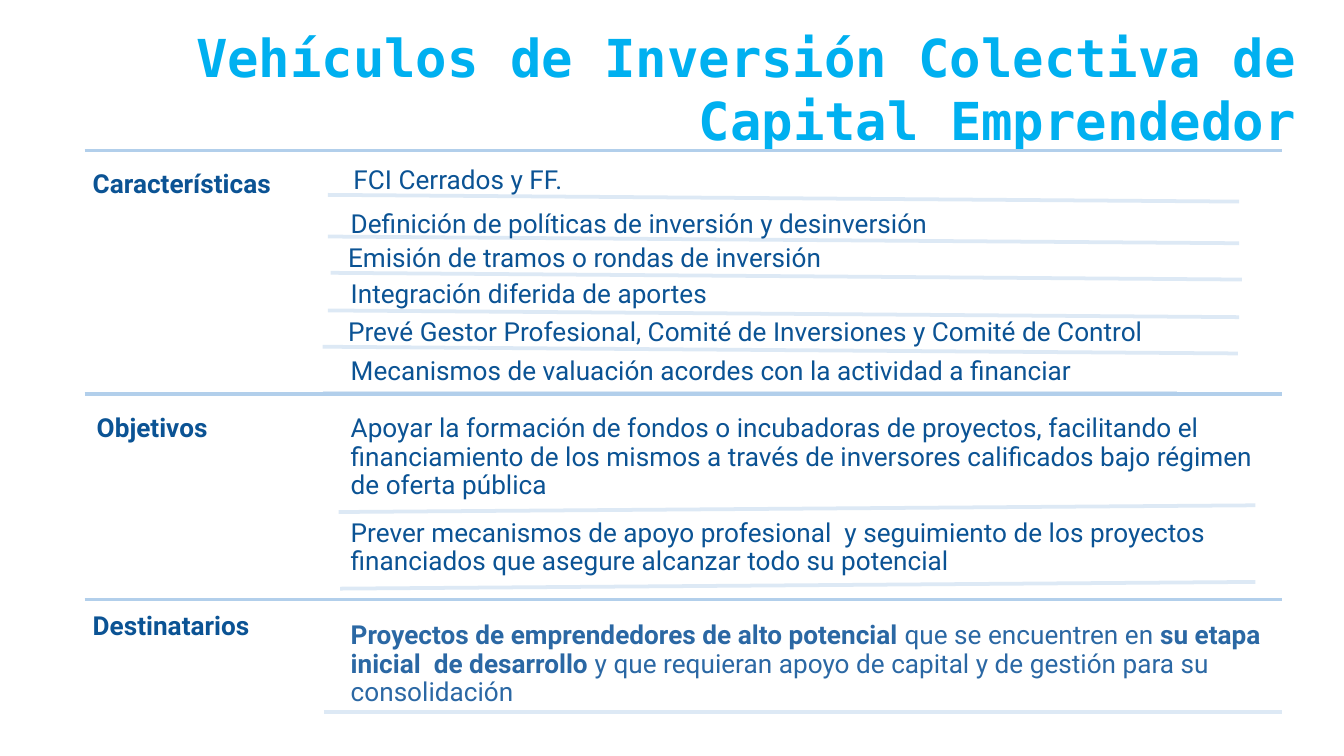
from lxml import etree
from pptx import Presentation
from pptx.dml.color import RGBColor
from pptx.enum.shapes import MSO_CONNECTOR
from pptx.enum.text import PP_ALIGN
from pptx.oxml.ns import qn
from pptx.util import Inches, Pt

STRAIGHT = MSO_CONNECTOR.STRAIGHT
LEFT, RIGHT, JUSTIFY = PP_ALIGN.LEFT, PP_ALIGN.RIGHT, PP_ALIGN.JUSTIFY
SKY = RGBColor(0x00, 0xB0, 0xF0)
NAVY = RGBColor(0x0B, 0x53, 0x94)
STEEL = RGBColor(0x2B, 0x68, 0xA4)
SECTION_LINE = RGBColor(0xB2, 0xCF, 0xEB)
ITEM_LINE = RGBColor(0xDD, 0xE9, 0xF5)

# Columns, in inches
PAGE_WIDTH = 10
LABEL_LEFT, LABEL_WIDTH = 0.63, 1.78
ITEM_LEFT, ITEM_WIDTH = 2.55, 7
TABLE_RIGHT = 9.54
SLOPE = 0.05

deck = Presentation()
deck.slide_width = Inches(PAGE_WIDTH)
deck.slide_height = Inches(PAGE_WIDTH * 9 / 16)
page = deck.slides.add_slide(deck.slide_layouts[6])


def add_text(left, top, width, height, spans, color=NAVY, size=14,
             font="Roboto", align=LEFT, inset=0.06, spacing=0.9):
    """Add a one-paragraph text box; spans are (text, bold) pairs."""
    box = page.shapes.add_textbox(*map(Inches, (left, top, width, height)))
    frame = box.text_frame
    frame.word_wrap = True
    frame.margin_left = frame.margin_right = Inches(inset)
    frame.margin_top = frame.margin_bottom = Inches(inset)
    para = frame.paragraphs[0]
    para.alignment, para.line_spacing = align, spacing
    para.font.name, para.font.size = font, Pt(size)
    para.font.color.rgb = color
    for text, bold in spans:
        span = para.add_run()
        span.text, span.font.bold = text, bold


def add_rule(left, top, right, bottom, color):
    rule = page.shapes.add_connector(
        STRAIGHT, *map(Inches, (left, top, right, bottom)))
    rule.line.color.rgb, rule.line.width = color, Pt(2)
    etree.SubElement(rule._element.spPr, qn("a:effectLst"))


add_text(0.27, 0.09, 9.47, 1.03,
         [("Vehículos de Inversión Colectiva de Capital Emprendedor", True)],
         SKY, 28, "DejaVu Sans Mono", RIGHT, 0.1, 1.0)

# Light rules under the items: left, top, right, rise or fall
item_rules = [
    (2.44, 1.45, 9.22, SLOPE),
    (2.44, 1.76, 9.22, SLOPE),
    (2.46, 2.03, 9.24, SLOPE),
    (2.44, 2.31, 9.22, SLOPE),
    (2.40, 2.58, 9.21, SLOPE),
    (2.40, 2.92, 8.76, 0),
    (2.52, 3.81, 9.34, -SLOPE),
    (2.53, 4.38, 9.34, -SLOPE),
    (2.41, 5.30, TABLE_RIGHT, 0),
]
for left, top, right, change in item_rules:
    add_rule(left, top, right, top + change, ITEM_LINE)

# Sections: rule, label offset, label top, label height, label
sections = [
    (1.12, 0, 1.21, 1.66, "Características"),
    (2.93, 0.03, 3.03, 1.21, "Objetivos"),
    (4.46, 0, 4.50, 0.86, "Destinatarios"),
]
for rule_top, offset, top, height, label in sections:
    add_rule(LABEL_LEFT, rule_top, TABLE_RIGHT, rule_top, SECTION_LINE)
    add_text(LABEL_LEFT + offset, top, LABEL_WIDTH, height, [(label, True)])

# Items: left offset, top, width, height, alignment, text
items = [
    (0.02, 1.18, 6.95, 0.16, JUSTIFY, "FCI Cerrados y FF."),
    (0, 1.51, 6.24, 0.22, LEFT,
     "Definición de políticas de inversión y desinversión"),
    (-0.02, 1.76, 7.01, 0.23, LEFT,
     "Emisión de tramos o rondas de inversión"),
    (0, 2.03, 6.24, 0.21, LEFT, "Integración diferida de aportes"),
    (-0.02, 2.31, 6.24, 0.26, LEFT,
     "Prevé Gestor Profesional, Comité de Inversiones y Comité de Control"),
    (0, 2.60, 6.24, 0.28, LEFT,
     "Mecanismos de valuación acordes con la actividad a financiar"),
    (0, 3.03, ITEM_WIDTH, 0.83, LEFT,
     "Apoyar la formación de fondos o incubadoras de proyectos, facilitando "
     "el financiamiento de los mismos a través de inversores calificados "
     "bajo régimen de oferta pública"),
    (0, 3.81, ITEM_WIDTH, 0.54, LEFT,
     "Prever mecanismos de apoyo profesional  y seguimiento de los proyectos "
     "financiados que asegure alcanzar todo su potencial"),
]
for offset, top, width, height, align, text in items:
    add_text(ITEM_LEFT + offset, top, width, height, [(text, False)],
             align=align)

add_text(ITEM_LEFT, 4.57, ITEM_WIDTH, 0.78, [
    ("Proyectos de emprendedores de alto potencial ", True),
    ("que se encuentren en ", False),
    ("su etapa inicial  de desarrollo ", True),
    ("y que requieran apoyo de capital y de gestión para su consolidación",
     False),
], STEEL)

deck.save("out.pptx")
